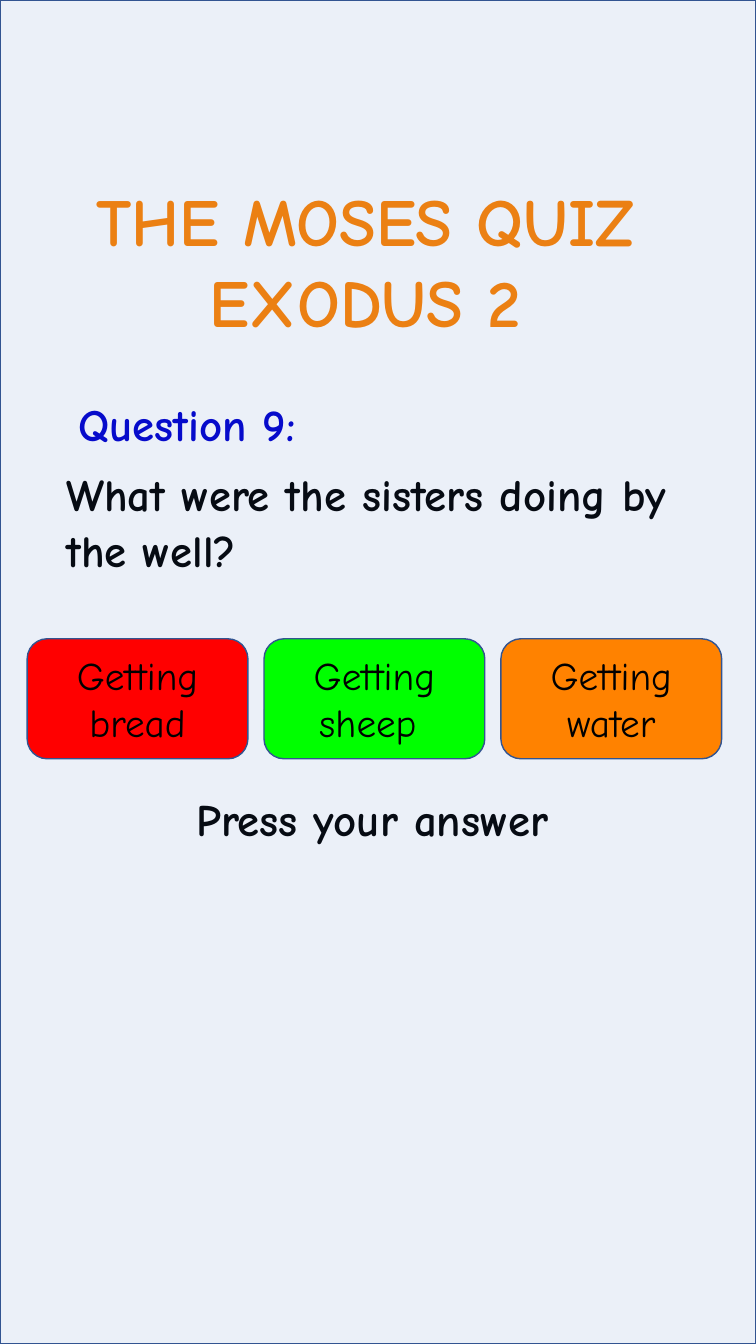
"""Build the Moses quiz question page."""
import dataclasses

import lxml.etree
import pptx
import pptx.dml.color
import pptx.enum.shapes
import pptx.enum.text
import pptx.oxml.ns
import pptx.util

Pt = pptx.util.Pt
Align = pptx.enum.text.PP_ALIGN
Preset = pptx.enum.shapes.MSO_SHAPE
qn = pptx.oxml.ns.qn


@dataclasses.dataclass(frozen=True)
class Theme:
    font: str = "Comic Neue"
    title_size: int = 48
    body_size: int = 32
    answer_size: int = 28
    ink: str = "000000"
    orange: str = "FF8200"
    red: str = "FF0000"
    green: str = "00FF00"
    question_blue: str = "0000CC"
    tint: str = "4472C4"
    border: str = "325491"


THEME = Theme()


def rgb(color):
    return pptx.dml.color.RGBColor.from_string(color)


def add_span(para, text, size, color, bold=True):
    span = para.add_run()
    span.text = text
    span.font.name = THEME.font
    span.font.size = Pt(size)
    span.font.bold = bold
    span.font.color.rgb = rgb(color)
    return span


def outline_span(span, color, width):
    line = lxml.etree.Element(qn("a:ln"), w=str(int(Pt(width))))
    fill = lxml.etree.SubElement(line, qn("a:solidFill"))
    lxml.etree.SubElement(fill, qn("a:srgbClr"), val=color)
    span.font._element.insert(0, line)


def add_text(page, place, lines, size, color, align=Align.LEFT, wrap=True,
             spacing=None, before=0, outline=None):
    box = page.shapes.add_textbox(*map(Pt, place))
    frame = box.text_frame
    frame.word_wrap = wrap
    for index, text in enumerate(lines):
        para = frame.add_paragraph() if index else frame.paragraphs[0]
        para.alignment = align
        para.space_before = Pt(before)
        para.line_spacing = spacing
        span = add_span(para, text, size, color)
        if outline:
            outline_span(span, *outline)


def add_panel(page, preset, place, color):
    panel = page.shapes.add_shape(preset, *map(Pt, place))
    panel.shadow.inherit = False
    panel.fill.solid()
    panel.fill.fore_color.rgb = rgb(color)
    panel.line.color.rgb = rgb(THEME.border)
    panel.line.width = Pt(1)
    return panel


def add_tint(page, place, color, percent):
    panel = add_panel(page, Preset.RECTANGLE, place, color)
    swatch = panel._element.spPr.find(qn("a:solidFill")).find(qn("a:srgbClr"))
    lxml.etree.SubElement(swatch, qn("a:alpha"), val=str(percent * 1000))


def add_answer(page, place, text, color):
    button = add_panel(page, Preset.ROUNDED_RECTANGLE, place, color)
    frame = button.text_frame
    frame.word_wrap = True
    frame.vertical_anchor = pptx.enum.text.MSO_ANCHOR.MIDDLE
    para = frame.paragraphs[0]
    para.alignment = Align.CENTER
    add_span(para, text, THEME.answer_size, THEME.ink, bold=False)


def main():
    deck = pptx.Presentation()
    deck.slide_width, deck.slide_height = Pt(540), Pt(960)
    page = deck.slides.add_slide(deck.slide_layouts[6])

    add_text(page, (21.6, 124.6, 496, 123.8), ["THE MOSES QUIZ ", "EXODUS 2 "],
             THEME.title_size, THEME.orange, Align.CENTER, wrap=False,
             outline=(THEME.red, 1.06))
    add_text(page, (33.8, 280, 199.4, 46), ["Question 9:"],
             THEME.body_size, THEME.question_blue, Align.CENTER, wrap=False)
    add_text(page, (40.3, 328.3, 458, 105), ["What were the sisters doing by the well?"],
             THEME.body_size, THEME.ink, spacing=Pt(40), before=7.5)
    add_text(page, (133.2, 566, 303.8, 51.8), ["Press your answer"],
             THEME.body_size, THEME.ink, spacing=0.9, before=7.5)

    add_tint(page, (0, 0, 540, 960), THEME.tint, 10)

    answers = [("Getting bread", THEME.red),
               ("Getting sheep ", THEME.green),
               ("Getting water", THEME.orange)]
    left, pitch = 19.4, 169.2
    for index, (text, color) in enumerate(answers):
        add_answer(page, (left + index * pitch, 456.3, 157.7, 85.7), text, color)

    deck.save("out.pptx")


if __name__ == "__main__":
    main()
